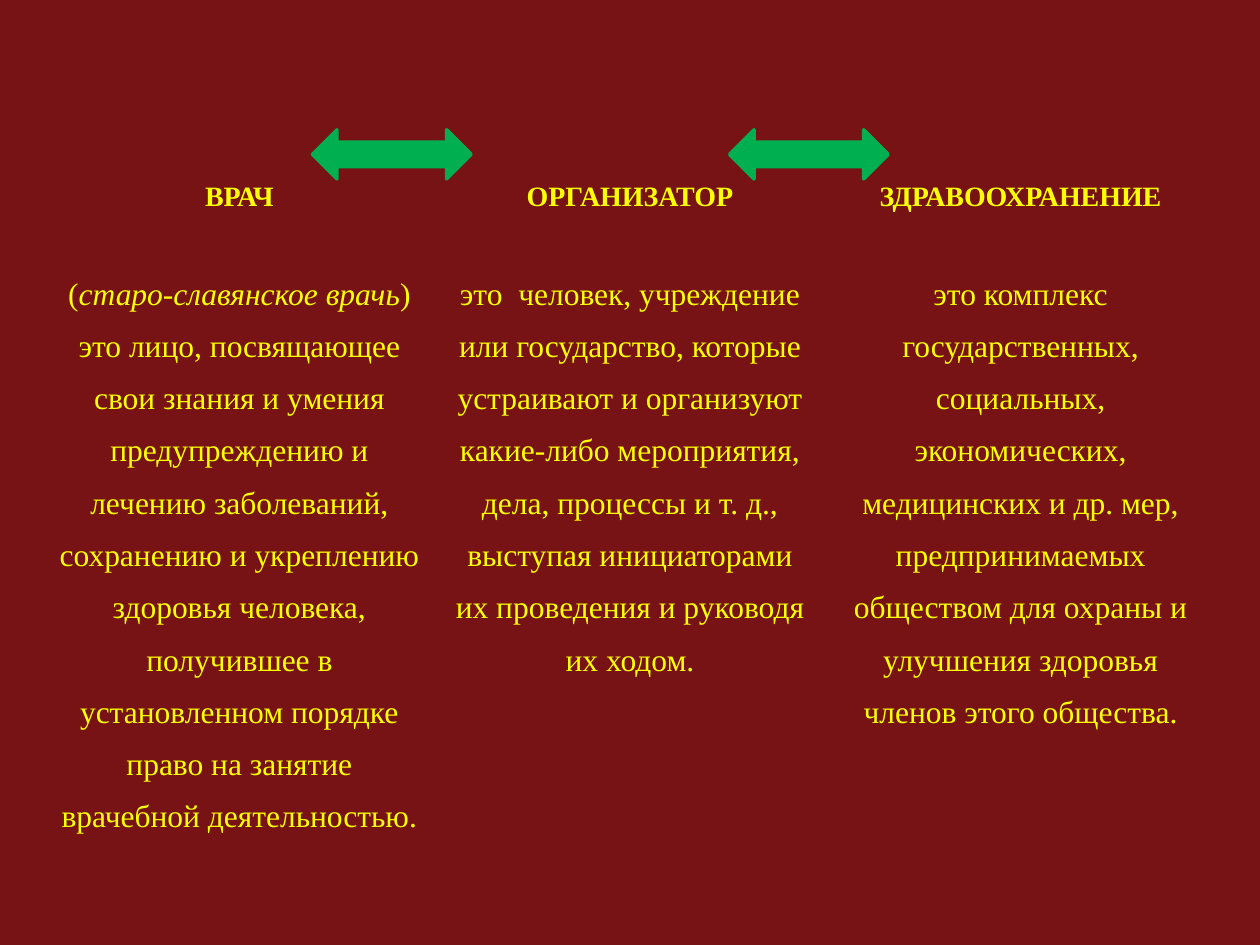
"""Build a slide that defines doctor, organizer and health care."""
from pptx import Presentation
from pptx import util as u
from pptx.dml.color import RGBColor
from pptx.enum import shapes, text
from pptx.oxml.ns import qn

BACKGROUND, YELLOW, GREEN = "771315", "FFFF00", "00B050"
FONT = "Times New Roman"
PLAIN_TABLE_STYLE = "{2D5ABB26-0587-4C30-8999-92F81FD0307C}"
ROW_HEIGHTS = (0.62, 5.07)
COLUMN_WIDTH = 3.1
ARROW_LEFTS = (2.48, 5.79)

TERMS = [
    ("ВРАЧ", [
        ("(", False),
        ("старо-славянское врачь", True),
        (") это лицо, посвящающее свои знания и умения предупреждению и "
         "лечению заболеваний, сохранению и укреплению здоровья человека, "
         "получившее в установленном порядке право на занятие врачебной "
         "деятельностью.", False),
    ]),
    ("ОРГАНИЗАТОР", [
        ("это  человек, учреждение или государство, которые устраивают и "
         "организуют какие-либо мероприятия, дела, процессы и т. д., выступая "
         "инициаторами их проведения и руководя их ходом.", False),
    ]),
    ("ЗДРАВООХРАНЕНИЕ", [
        ("это комплекс государственных, социальных, экономических, медицинских "
         "и др. мер, предпринимаемых обществом для охраны и улучшения здоровья "
         "членов этого общества.", False),
    ]),
]


def paint(fill, color):
    """Give a fill one solid colour."""
    fill.solid()
    fill.fore_color.rgb = RGBColor.from_string(color)


def write_cell(cell, runs, size, bold=False, spacing=None):
    """Write centred yellow runs into a transparent cell."""
    cell.fill.background()
    paragraph = cell.text_frame.paragraphs[0]
    paragraph.alignment = text.PP_ALIGN.CENTER
    paragraph.line_spacing = spacing
    for words, italic in runs:
        run = paragraph.add_run()
        run.text = words
        font = run.font
        font.name, font.size = FONT, u.Pt(size)
        font.bold, font.italic = bold, italic
        font.color.rgb = RGBColor.from_string(YELLOW)


def add_terms_table(slide):
    """Add the table with one column for each term."""
    frame = slide.shapes.add_table(
        len(ROW_HEIGHTS), len(TERMS), u.Inches(0.35), u.Inches(1.39),
        u.Inches(COLUMN_WIDTH * len(TERMS)), u.Inches(sum(ROW_HEIGHTS)))
    table = frame.table
    table.first_row = table.horz_banding = False
    next(table._tbl.iter(qn("a:tableStyleId"))).text = PLAIN_TABLE_STYLE
    for row, height in zip(table.rows, ROW_HEIGHTS):
        row.height = u.Inches(height)
    for index, (term, definition) in enumerate(TERMS):
        table.columns[index].width = u.Inches(COLUMN_WIDTH)
        write_cell(table.cell(0, index), [(term, False)], 16, bold=True)
        write_cell(table.cell(1, index), definition, 18, spacing=1.5)


def add_arrow(slide, left):
    """Add a green double arrow between two terms."""
    arrow = slide.shapes.add_shape(
        shapes.MSO_SHAPE.LEFT_RIGHT_ARROW, u.Inches(left), u.Inches(1.03),
        u.Inches(1.26), u.Inches(0.39))
    arrow.shadow.inherit = False
    paint(arrow.fill, GREEN)
    paint(arrow.line.fill, GREEN)
    arrow.line.width = u.Pt(2)


def main():
    """Build and save the presentation."""
    presentation = Presentation()
    presentation.slide_width, presentation.slide_height = u.Inches(10), u.Inches(7.5)
    slide = presentation.slides.add_slide(presentation.slide_layouts[6])
    paint(slide.background.fill, BACKGROUND)
    add_terms_table(slide)
    for left in ARROW_LEFTS:
        add_arrow(slide, left)
    presentation.save("out.pptx")


if __name__ == "__main__":
    main()
